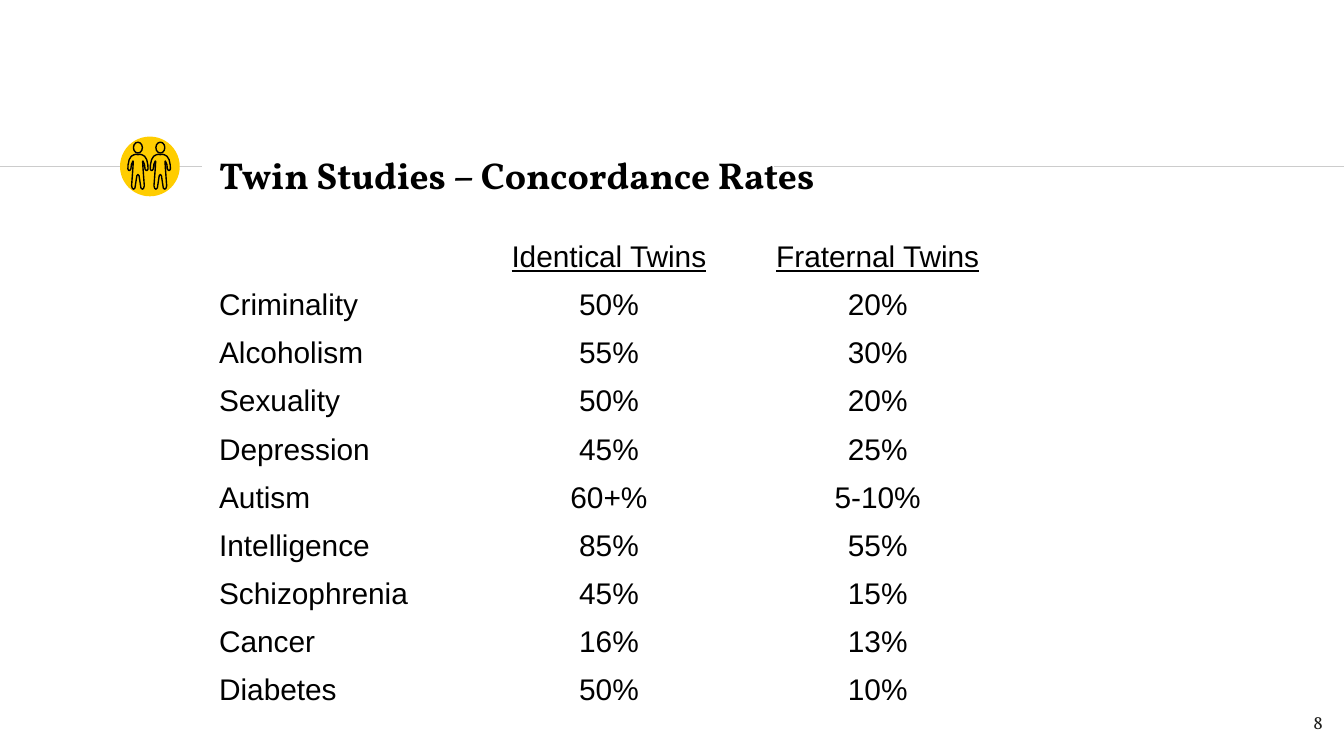
import pptx
import pptx.dml.color
import pptx.enum.shapes
import pptx.enum.text
import pptx.oxml
import pptx.oxml.ns
import pptx.util

Pt = pptx.util.Pt
Align = pptx.enum.text.PP_ALIGN
Anchor = pptx.enum.text.MSO_ANCHOR
Oval = pptx.enum.shapes.MSO_SHAPE.OVAL

ROWS = [
    ("", "Identical Twins", "Fraternal Twins"),
    ("Criminality", "50%", "20%"),
    ("Alcoholism", "55%", "30%"),
    ("Sexuality", "50%", "20%"),
    ("Depression", "45%", "25%"),
    ("Autism", "60+%", "5-10%"),
    ("Intelligence", "85%", "55%"),
    ("Schizophrenia", "45%", "15%"),
    ("Cancer", "16%", "13%"),
    ("Diabetes", "50%", "10%"),
]
HALF_BODY = [
    (0, 6.7), (1.1, 6.5), (2.2, 6.8), (3.6, 7.6), (4.7, 9.4),
    (5.3, 12.2), (5.4, 14.4), (5, 15.1), (4.3, 15.1), (3.8, 14.4),
    (3.5, 11.9), (2.7, 10.1), (2.5, 10.4), (2.7, 13.7), (3.4, 23.4),
    (3, 24.8), (2.3, 25.2), (1.6, 24.5), (0.6, 18), (0, 17.3),
]


def color(hex_string):
    """Return the colour for a hex string."""
    return pptx.dml.color.RGBColor.from_string(hex_string)


def style(para, face, size, hex_string, align):
    """Set the font and alignment of a paragraph."""
    para.alignment = align
    para.font.name = face
    para.font.size = Pt(size)
    para.font.color.rgb = color(hex_string)


def set_frame(frame, anchor):
    """Give a text frame even insets, wrapping and a vertical anchor."""
    frame.word_wrap = True
    frame.auto_size = pptx.enum.text.MSO_AUTO_SIZE.NONE
    frame.vertical_anchor = anchor
    frame.margin_left = frame.margin_right = Pt(7.2)
    frame.margin_top = frame.margin_bottom = Pt(7.2)


def add_rule(page, left, right, y):
    """Draw a thin grey horizontal line."""
    rule = page.shapes.add_connector(
        pptx.enum.shapes.MSO_CONNECTOR.STRAIGHT, Pt(left), Pt(y), Pt(right), Pt(y))
    rule.line.color.rgb = color("CCCCCC")
    rule.line.width = Pt(0.75)
    rule.element.spPr.append(pptx.oxml.parse_xml(
        f'<a:effectLst {pptx.oxml.ns.nsdecls("a")}/>'))


def outline(shape):
    """Leave a shape unfilled with a thin black line."""
    shape.shadow.inherit = False
    shape.fill.background()
    shape.line.color.rgb = color("000000")
    shape.line.width = Pt(0.75)


def add_twin(page, center, top):
    """Draw one standing figure around a vertical axis."""
    mirrored = [(-x, y) for x, y in reversed(HALF_BODY[1:-1])]
    points = [(Pt(center + x), Pt(top + y)) for x, y in HALF_BODY + mirrored]
    builder = page.shapes.build_freeform(*points[0])
    builder.add_line_segments(points[1:], close=True)
    outline(builder.convert_to_shape())
    outline(page.shapes.add_shape(Oval, Pt(center - 2.4), Pt(top), Pt(4.8), Pt(5.8)))


def add_badge(page, left, top, size):
    """Draw the yellow disc with two twins."""
    disc = page.shapes.add_shape(Oval, Pt(left), Pt(top), Pt(size), Pt(size))
    disc.shadow.inherit = False
    disc.fill.solid()
    disc.fill.fore_color.rgb = color("FFCD00")
    disc.line.fill.background()
    for offset in (-6, 6):
        add_twin(page, left + size / 2 + offset - 0.4, top + 3)


def add_title(page, left, top, width, height):
    """Place the title above the rules."""
    title = page.shapes.title
    title.element.getparent().append(title.element)
    title.left, title.top = Pt(left), Pt(top)
    title.width, title.height = Pt(width), Pt(height)
    set_frame(title.text_frame, Anchor.MIDDLE)
    title.text_frame.text = "Twin Studies – Concordance Rates"
    para = title.text_frame.paragraphs[0]
    style(para, "Vollkorn", 20, "000000", Align.LEFT)
    para.font.bold = True


def set_borders(cell, bottom):
    """Give a cell white borders, with its own bottom width."""
    properties = cell._tc.get_or_add_tcPr()
    widths = {"lnL": 1, "lnR": 1, "lnT": 1, "lnB": bottom}
    for index, (side, width) in enumerate(widths.items()):
        properties.insert(index, pptx.oxml.parse_xml(
            f'<a:{side} {pptx.oxml.ns.nsdecls("a")} w="{Pt(width)}"><a:solidFill>'
            f'<a:srgbClr val="FFFFFF"/></a:solidFill></a:{side}>'))


def add_rates(page, left, top, width, height):
    """Fill the table of concordance rates."""
    table = page.shapes.add_table(
        len(ROWS), len(ROWS[0]), Pt(left), Pt(top), Pt(width), Pt(height)).table
    table.first_row = table.horz_banding = False
    for row_index, row in enumerate(ROWS):
        for column_index, text in enumerate(row):
            cell = table.cell(row_index, column_index)
            cell.text = text
            cell.fill.background()
            set_borders(cell, 1 if row_index else 3)
            para = cell.text_frame.paragraphs[0]
            style(para, "Arial", 16, "000000",
                  Align.CENTER if column_index else Align.LEFT)
            para.font.bold = False
            para.font.underline = row_index == 0


def add_page_number(page, left, top, width, height):
    """Place the page number."""
    box = page.shapes.add_textbox(Pt(left), Pt(top), Pt(width), Pt(height))
    set_frame(box.text_frame, Anchor.TOP)
    box.text_frame.text = "8"
    style(box.text_frame.paragraphs[0], "Vollkorn", 10, "1D1D1B", Align.RIGHT)


def main():
    """Build the deck and save it."""
    deck = pptx.Presentation()
    deck.slide_width, deck.slide_height = Pt(720), Pt(405)
    page = deck.slides.add_slide(deck.slide_layouts[5])
    add_rule(page, 0, 108, 89.2)
    add_rule(page, 414.7, 720, 89.2)
    add_badge(page, 64.3, 73.2, 32)
    add_title(page, 110.2, 76.3, 362, 34.6)
    add_page_number(page, 672.5, 373.7, 43.2, 31)
    add_rates(page, 110.2, 125.3, 432, 258)
    deck.save("out.pptx")


if __name__ == "__main__":
    main()
